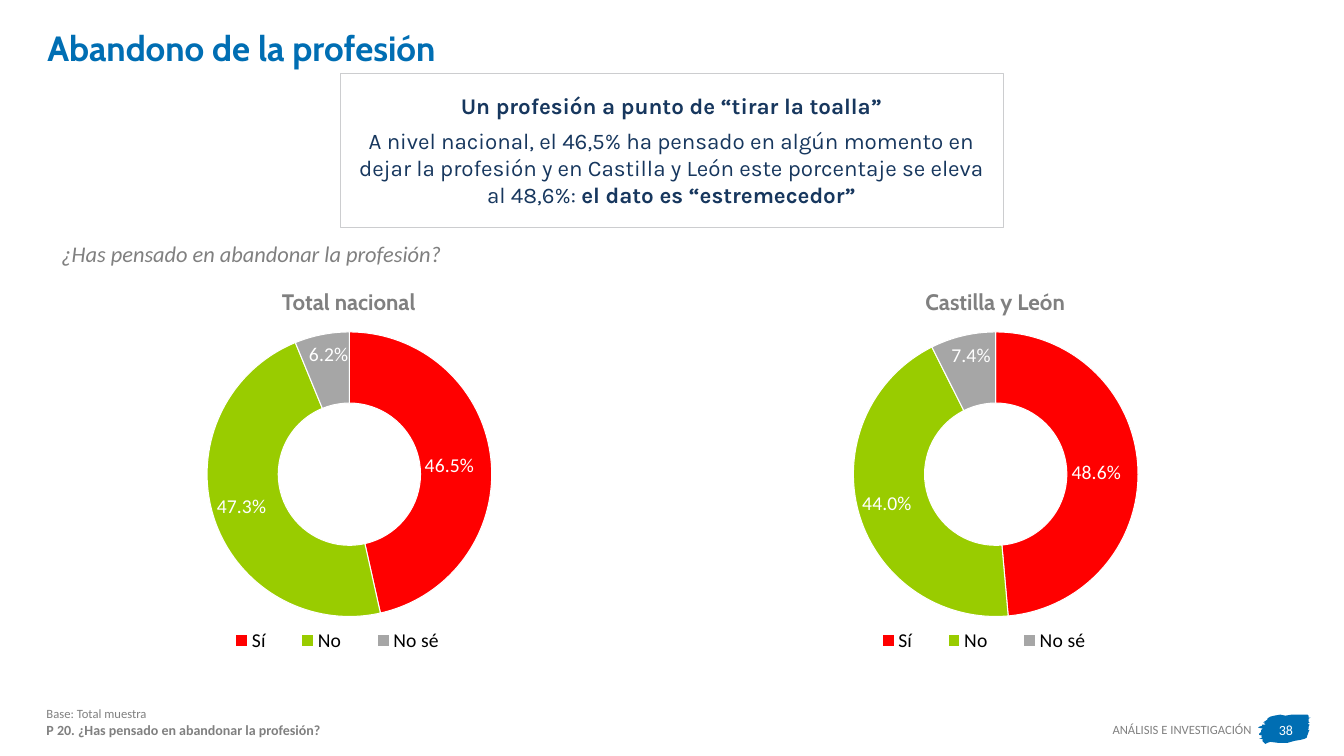
from dataclasses import dataclass
from typing import NamedTuple

from pptx import Presentation, util as u
from pptx.chart import data as chart_data
from pptx.dml import color
from pptx.enum import chart as chart_enum, shapes, text
from pptx.oxml import ns, parse_xml

WIDTH, HEIGHT = u.Inches(13.33), u.Inches(7.5)


@dataclass(frozen=True)
class Theme:
    blue: str = "006EB3"
    navy: str = "17375E"
    grey: str = "808080"
    border: str = "CCCDCF"
    white: str = "FFFFFF"
    black: str = "000000"
    slices: tuple[str, ...] = ("FF0000", "99CC00", "A6A6A6")
    heading_font: str = "Cabin"
    body_font: str = "Calibri"
    callout_font: str = "Karla"
    title: float = 25
    lead: float = 16
    label: float = 14
    note: float = 10
    small: float = 9


THEME = Theme()


class Area(NamedTuple):
    """Left, top, width and height as percentages of the slide."""
    left: float
    top: float
    width: float
    height: float

    def lengths(self) -> list[int]:
        return [int(side * share / 100) for side, share in zip((WIDTH, HEIGHT) * 2, self)]


class Span(NamedTuple):
    words: str
    size: float = THEME.lead
    colour: str = THEME.grey
    font: str = THEME.body_font
    bold: bool = False
    italic: bool = False


class TextBlock(NamedTuple):
    area: Area
    paras: list[list[Span]]
    align: text.PP_ALIGN = text.PP_ALIGN.LEFT
    anchor: text.MSO_ANCHOR = text.MSO_ANCHOR.TOP
    wrap: bool = True
    after: float = 0
    inset: tuple[float, float] = (0.1, 0.05)
    fill: str | None = None
    line: str | None = None


class Ring(NamedTuple):
    name: str
    values: tuple[float, ...]


# Content
CATEGORIES = ("Sí", "No", "No sé")
RINGS = (Ring("Total nacional", (46.5, 47.3, 6.2)), Ring("Castilla y León", (48.6, 44, 7.4)))
LABEL_SHIFTS = ((-0.01, 0.01), (-0.01, 0), (0, -0.04))
RING_AREA = Area(3.83, 40.53, 44.34, 48.27)
RING_HEADING = Area(18.45, 37.47, 15, 4.93)
RING_STEP = 48.09
QUESTION = "¿Has pensado en abandonar la profesión?"
CALLOUT = (THEME.lead, THEME.navy, THEME.callout_font)
BLOCKS = (
    TextBlock(Area(81.92, 94.8, 11.93, 3.33), [[Span("ANÁLISIS E INVESTIGACIÓN", THEME.small)]],
              align=text.PP_ALIGN.RIGHT, wrap=False),
    TextBlock(Area(2.78, 2.8, 79.9, 6.93), [[Span(
        "Abandono de la profesión", THEME.title, THEME.blue, THEME.heading_font, bold=True)]]),
    TextBlock(Area(94.22, 94.93, 2.93, 3.2), [[Span("38", THEME.note, THEME.white)]],
              text.PP_ALIGN.CENTER, text.MSO_ANCHOR.MIDDLE, wrap=False),
    TextBlock(Area(2.78, 92.67, 80.05, 5.47),
              [[Span("Base: Total muestra", THEME.small)],
               [Span(f"P 20. {QUESTION}", THEME.note, bold=True)]],
              anchor=text.MSO_ANCHOR.BOTTOM, inset=(0.09, 0.04)),
    TextBlock(Area(3.83, 31.07, 44.34, 4.93), [[Span(QUESTION, italic=True)]]),
    TextBlock(Area(25.28, 9.73, 49.36, 20.27),
              [[Span("Un profesión a punto de “tirar la toalla”", *CALLOUT, bold=True)],
               [Span("A nivel nacional, el 46,5% ha pensado en algún momento en dejar la profesión "
                     "y en Castilla y León este porcentaje se eleva al 48,6%: ", *CALLOUT),
                Span("el dato es “estremecedor”", *CALLOUT, bold=True)]],
              text.PP_ALIGN.CENTER, text.MSO_ANCHOR.MIDDLE, after=6,
              fill=THEME.white, line=THEME.border),
)

# Brush stroke outline, on a grid of 52 columns by 29 rows
STROKE_AREA = Area(93.62, 94.53, 3.9, 3.87)
STROKE_COLUMNS, STROKE_ROWS = 52, 29
STROKE = (
    (4, 23), (3, 22), (4, 21), (1, 20), (1, 19), (2, 18), (3, 17), (3, 15), (5, 14), (0, 13),
    (1, 12), (4, 11), (4, 10), (8, 10), (6, 9), (7, 8), (5, 8), (6, 7), (9, 5), (9, 4), (12, 2),
    (16, 1), (22, 0), (27, 1), (33, 0), (49, 0), (50, 1), (50, 3), (52, 3), (50, 4), (50, 7),
    (51, 8), (49, 9), (51, 10), (50, 12), (50, 14), (49, 15), (51, 15), (50, 17), (49, 20),
    (48, 23), (46, 24), (42, 25), (36, 26), (29, 28), (20, 28), (12, 27), (9, 28), (7, 29),
    (5, 27), (4, 26), (5, 25), (3, 24), (1, 24),
)


def style_font(font, size: float, colour: str, name: str = THEME.body_font) -> None:
    font.size, font.name = u.Pt(size), name
    font.color.rgb = color.RGBColor.from_string(colour)


def paint(item, fill: str, line: str | None = None, weight: float = 0.25) -> None:
    item.fill.solid()
    item.fill.fore_color.rgb = color.RGBColor.from_string(fill)
    if line:
        item.line.color.rgb, item.line.width = color.RGBColor.from_string(line), u.Pt(weight)
    else:
        item.line.fill.background()


def draw_stroke(page) -> None:
    left, top, width, height = STROKE_AREA.lengths()
    scale = (width / STROKE_COLUMNS, height / STROKE_ROWS)
    builder = page.shapes.build_freeform(*STROKE[0], scale=scale)
    stroke = builder.add_line_segments(STROKE[1:], close=True).convert_to_shape(left, top)
    stroke.shadow.inherit = False
    paint(stroke, THEME.blue)


def draw_block(page, block: TextBlock) -> None:
    if block.fill:
        box = page.shapes.add_shape(shapes.MSO_SHAPE.RECTANGLE, *block.area.lengths())
        box.shadow.inherit = False
        paint(box, block.fill, block.line)
    else:
        box = page.shapes.add_textbox(*block.area.lengths())
    frame = box.text_frame
    frame.word_wrap, frame.vertical_anchor = block.wrap, block.anchor
    frame.margin_left = frame.margin_right = u.Inches(block.inset[0])
    frame.margin_top = frame.margin_bottom = u.Inches(block.inset[1])
    for index, spans in enumerate(block.paras):
        para = frame.add_paragraph() if index else frame.paragraphs[0]
        para.alignment, para.space_after = block.align, u.Pt(block.after)
        for span in spans:
            run = para.add_run()
            run.text = span.words
            style_font(run.font, span.size, span.colour, span.font)
            run.font.bold, run.font.italic = span.bold, span.italic


def layout_xml(**settings: str | float):
    items = "".join(f'<c:{key} val="{value}"/>' for key, value in settings.items())
    return parse_xml(f'<c:layout {ns.nsdecls("c")}><c:manualLayout>{items}</c:manualLayout></c:layout>')


def draw_ring(page, ring: Ring, area: Area) -> None:
    data = chart_data.CategoryChartData()
    data.categories = CATEGORIES
    data.add_series("Series 1", ring.values)
    chart = page.shapes.add_chart(chart_enum.XL_CHART_TYPE.DOUGHNUT, *area.lengths(), data).chart
    chart.has_title, chart.has_legend = False, True
    style_font(chart.font, 18, THEME.black)
    chart.legend.position = chart_enum.XL_LEGEND_POSITION.BOTTOM
    chart.legend.include_in_layout = False
    style_font(chart.legend.font, THEME.label, THEME.black)
    # Slices and their labels
    series = chart.plots[0].series[0]
    labels = series.data_labels
    labels.show_value, labels.number_format, labels.number_format_is_linked = True, "0.0\\%", False
    style_font(labels.font, THEME.label, THEME.white)
    for index, colour in enumerate(THEME.slices):
        point = series.points[index]
        paint(point.format, colour, THEME.white, 0.75)
        style_font(point.data_label.font, THEME.label, THEME.white)
    # Places within the chart
    root = chart.element
    for label, (x, y) in zip(root.xpath(".//c:dLbl"), LABEL_SHIFTS):
        label.insert(1, layout_xml(x=x, y=y))
        label.insert(2, parse_xml(
            f'<c:numFmt {ns.nsdecls("c")} formatCode="0.0\\%" sourceLinked="0"/>'))
    for old in root.xpath(".//c:plotArea/c:layout | .//c:legend/c:layout"):
        old.getparent().remove(old)
    edges = {"xMode": "edge", "yMode": "edge", "x": 0.26}
    root.xpath(".//c:plotArea")[0].insert(
        0, layout_xml(layoutTarget="inner", **edges, y=0.07, w=0.48, h=0.78))
    root.xpath(".//c:legendPos")[0].addnext(layout_xml(**edges, y=0.87, w=0.44, h=0.09))
    root.xpath(".//c:holeSize")[0].set("val", "35")


def main() -> None:
    deck = Presentation()
    deck.slide_width, deck.slide_height = WIDTH, HEIGHT
    page = deck.slides.add_slide(deck.slide_layouts[6])
    draw_stroke(page)
    for block in BLOCKS:
        draw_block(page, block)
    for column, ring in enumerate(RINGS):
        area, place = (spot._replace(left=spot.left + column * RING_STEP)
                       for spot in (RING_AREA, RING_HEADING))
        draw_ring(page, ring, area)
        heading = Span(ring.name, font=THEME.heading_font, bold=True)
        draw_block(page, TextBlock(place, [[heading]], text.PP_ALIGN.CENTER, after=6, fill=THEME.white))
    deck.save("out.pptx")


if __name__ == "__main__":
    main()
